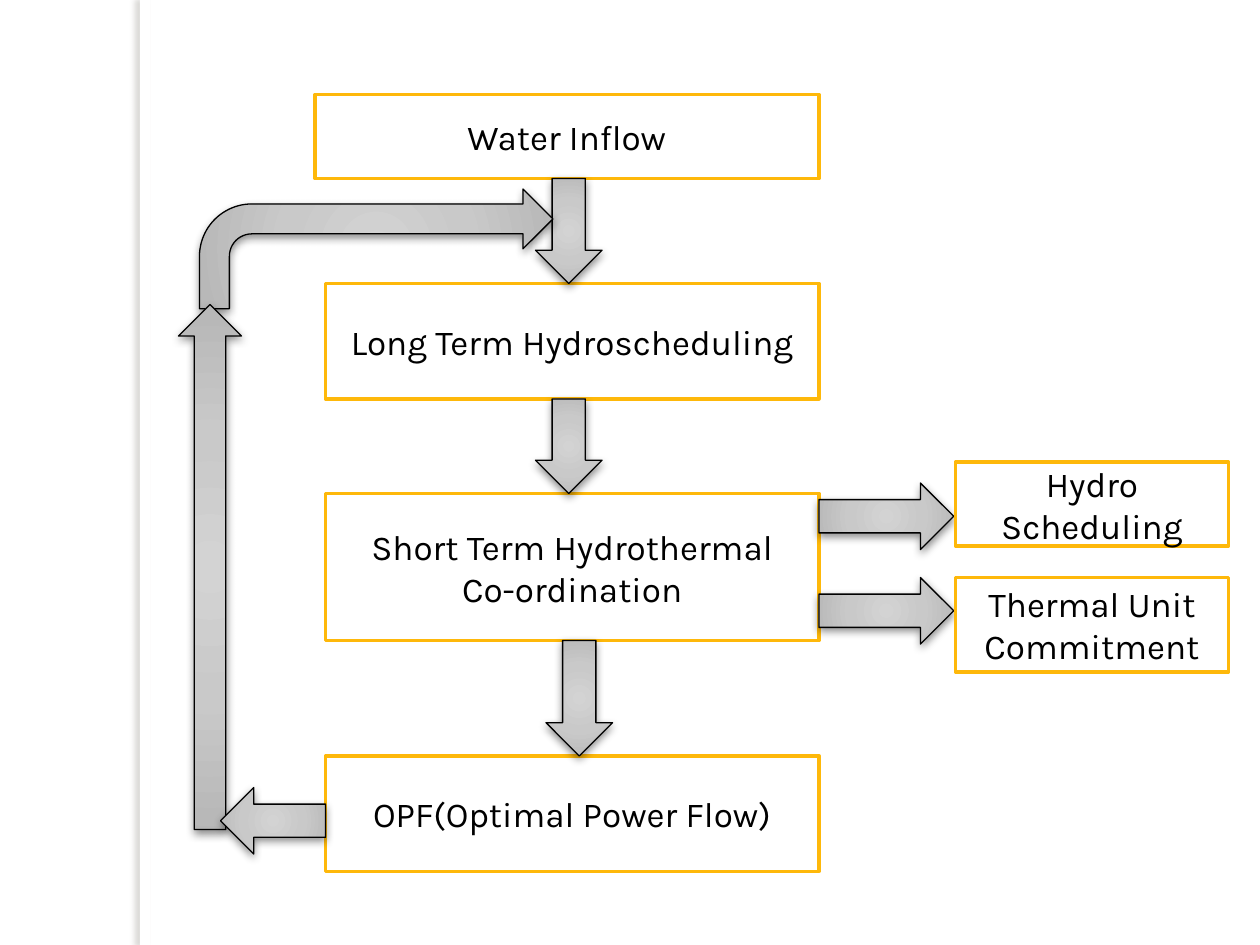
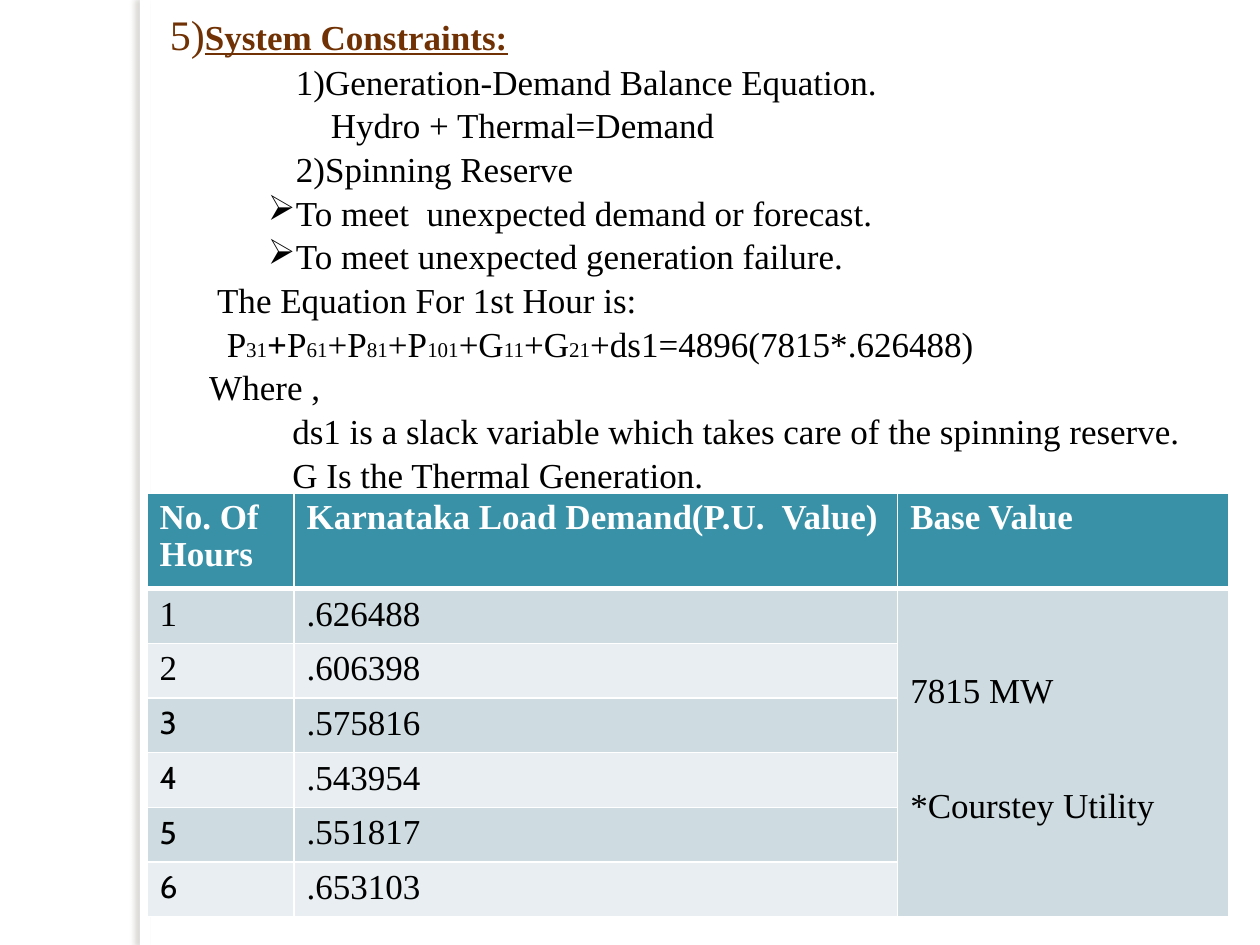
from lxml import etree
from pptx import Presentation
from pptx import util as u
from pptx.dml.color import RGBColor
from pptx.enum import shapes, text
from pptx.oxml.ns import qn

Pt = u.Pt
SHAPE = shapes.MSO_SHAPE
SERIF, SANS, DIGITS = "Times New Roman", "Karla", "Cabin"
BLACK, WHITE, GOLD, BROWN, TEAL = "000000", "FFFFFF", "FEB80A", "703204", "3891A7"
ROW_FILLS = ("CEDCE1", "E8EEF1")
GREYS = ((0, "D3D3D3"), (50, "C9C9C9"), (97, "B8B8B8"), (100, "B2B2B2"))


def rgb(color):
    return RGBColor.from_string(color)


def sub(parent, tag, **attrs):
    """Append a DrawingML child element."""
    return etree.SubElement(parent, qn("a:" + tag), {k: str(v) for k, v in attrs.items()})


def style_font(font, size=20, name=SERIF, color=BLACK, bold=False):
    font.size, font.name, font.bold = Pt(size), name, bold
    font.color.rgb = rgb(color)


class Deck:
    def __init__(self):
        self.prs = Presentation()
        self.prs.slide_width, self.prs.slide_height = Pt(720), Pt(540)
        self.s = None

    def new_slide(self):
        """Add a blank slide with the shadowed edge band."""
        self.s = self.prs.slides.add_slide(self.prs.slide_layouts[6])
        band = self.shape(SHAPE.RECTANGLE, 80, 0, 6, 540)
        self.shadow(band, "736F63", 25, 3, 3, 180)

    def shape(self, kind, x, y, w, h, line=None, width=1):
        sp = self.s.shapes.add_shape(kind, Pt(x), Pt(y), Pt(w), Pt(h))
        sp.shadow.inherit = False
        sp.fill.solid()
        sp.fill.fore_color.rgb = rgb(WHITE)
        if line:
            sp.line.color.rgb = rgb(line)
            sp.line.width = Pt(width)
        else:
            sp.line.fill.background()
        return sp

    def shadow(self, sp, color, alpha, blur, dist, angle):
        effects = sp._element.spPr.find(qn("a:effectLst"))
        outer = sub(effects, "outerShdw", blurRad=Pt(blur), dist=Pt(dist),
                    dir=angle * 60000, rotWithShape=0)
        sub(sub(outer, "srgbClr", val=color), "alpha", val=alpha * 1000)

    def box(self, label, x, y, w, h):
        sp = self.shape(SHAPE.RECTANGLE, x, y, w, h, GOLD, 2)
        tf = sp.text_frame
        tf.word_wrap = True
        tf.vertical_anchor = text.MSO_ANCHOR.MIDDLE
        tf.text = label
        for p in tf.paragraphs:
            p.alignment = text.PP_ALIGN.CENTER
            style_font(p.font, name=SANS)

    def arrow(self, kind, x, y, w, h):
        """Block arrow with a grey radial gradient and a soft shadow."""
        sp = self.shape(kind, x, y, w, h, BLACK, 0.75)
        spPr = sp._element.spPr
        grad = etree.Element(qn("a:gradFill"), rotWithShape="1")
        stops = sub(grad, "gsLst")
        for pos, color in GREYS:
            sub(sub(stops, "gs", pos=pos * 1000), "srgbClr", val=color)
        circle = sub(grad, "path", path="circle")
        sub(circle, "fillToRect", l=50000, t=50000, r=50000, b=50000)
        spPr.replace(spPr.find(qn("a:solidFill")), grad)
        self.shadow(sp, BLACK, 43, 5, 2, 90)

    def text_box(self, x, y, w, h):
        tf = self.s.shapes.add_textbox(Pt(x), Pt(y), Pt(w), Pt(h)).text_frame
        tf.word_wrap = True
        return tf

    def paragraph(self, tf, words="", left=0, bullet=None):
        p = tf.add_paragraph()
        p.text = words
        p.line_spacing = 1.045
        style_font(p.font)
        pPr = p._p.get_or_add_pPr()
        pPr.set("marL", str(Pt(left)))
        pPr.set("indent", str(Pt(-16 if bullet else 0)))
        if bullet:
            sub(pPr, "buChar", char=bullet)
        return p

    def run(self, p, words, size=20, color=BLACK, bold=False):
        r = p.add_run()
        r.text = words
        style_font(r.font, size, color=color, bold=bold)
        return r

    def table(self, x, y, widths, heights):
        tb = self.s.shapes.add_table(len(heights), len(widths), Pt(x), Pt(y),
                                     Pt(sum(widths)), Pt(sum(heights))).table
        for col, w in zip(tb.columns, widths):
            col.width = Pt(w)
        for row, h in zip(tb.rows, heights):
            row.height = Pt(h)
        return tb

    def cell(self, cell, words, fill, header=False, font=SERIF, size=20):
        tcPr = cell._tc.get_or_add_tcPr()
        for side in "LRTB":
            ln = sub(tcPr, "ln" + side, w=Pt(3 if header and side == "B" else 1))
            sub(sub(ln, "solidFill"), "srgbClr", val=WHITE)
        cell.fill.solid()
        cell.fill.fore_color.rgb = rgb(fill)
        cell.text = words
        for p in cell.text_frame.paragraphs:
            style_font(p.font, size, font, WHITE if header else BLACK, header)
            if header:
                p.line_spacing = 0.95


def scheduling_flow(d):
    d.new_slide()
    d.box("Water Inflow", 180, 54, 288, 48)
    d.box("Long Term Hydroscheduling", 186, 162, 282, 66)
    d.box("Short Term Hydrothermal\nCo-ordination", 186, 282, 282, 84)
    for y in (276, 330):
        d.arrow(SHAPE.RIGHT_ARROW, 468, y, 77, 38)
    d.box("Hydro Scheduling", 546, 264, 156, 48)
    d.box("Thermal Unit Commitment", 546, 330, 156, 54)
    d.box("OPF(Optimal Power Flow)", 186, 432, 282, 66)
    for x, y, h in ((306, 102, 60), (306, 228, 54), (312, 366, 66)):
        d.arrow(SHAPE.DOWN_ARROW, x, y, 38, h)
    d.arrow(SHAPE.BENT_ARROW, 114, 108, 202, 68.4)
    d.arrow(SHAPE.UP_ARROW, 102, 174, 36, 300)
    d.arrow(SHAPE.LEFT_ARROW, 126, 450, 60, 38)


def system_constraints(d):
    d.new_slide()
    tf = d.text_box(90, 0, 606, 300)
    title = tf.paragraphs[0]
    title.line_spacing = 1.045
    title.space_before = Pt(2)
    d.run(title, "5)", 24, BROWN)
    d.run(title, "System Constraints:", color=BROWN, bold=True).font.underline = True

    for words, left, bullet in (
            ("1)Generation-Demand Balance Equation.", 72, None),
            ("Hydro + Thermal=Demand", 92, None),
            ("2)Spinning Reserve", 72, None),
            ("To meet  unexpected demand or forecast.", 72, "➢"),
            ("To meet unexpected generation failure.", 72, "➢"),
            ("The Equation For 1st Hour is:", 27, None)):
        d.paragraph(tf, words, left, bullet)

    equation = d.paragraph(tf, left=32.5)
    for i, (symbol, index) in enumerate((("P", "31"), ("P", "61"), ("P", "81"),
                                         ("P", "101"), ("G", "11"), ("G", "21"))):
        if i:
            d.run(equation, "+", bold=i == 1)
        d.run(equation, symbol)
        d.run(equation, index, 12)
    d.run(equation, "+ds1=4896(7815*.626488)")

    d.paragraph(tf, "Where ,", 22.5)
    d.paragraph(tf, "ds1 is a slack variable which takes care of the spinning reserve.", 70)
    d.paragraph(tf, "G Is the Thermal Generation.", 70)

    demands = (".626488", ".606398", ".575816", ".543954", ".551817", ".653103")
    tb = d.table(84, 282, (84, 345, 189), [54.4] + [31.2] * len(demands))
    for c, head in enumerate(("No. Of Hours", "Karnataka Load Demand(P.U.  Value)", "Base Value")):
        d.cell(tb.cell(0, c), head, TEAL, header=True)
    for hour, demand in enumerate(demands, 1):
        fill = ROW_FILLS[(hour - 1) % 2]
        font, size = (SERIF, 20) if hour < 3 else (DIGITS, 18)
        d.cell(tb.cell(hour, 0), str(hour), fill, font=font, size=size)
        d.cell(tb.cell(hour, 1), demand, fill)

    base = tb.cell(1, 2)
    base.merge(tb.cell(len(demands), 2))
    d.cell(base, "7815 MW\n*Courstey Utility", ROW_FILLS[0])
    base.margin_top = Pt(48)
    base.text_frame.paragraphs[1].space_before = Pt(43)


def main():
    d = Deck()
    scheduling_flow(d)
    system_constraints(d)
    d.prs.save("out.pptx")


if __name__ == "__main__":
    main()
